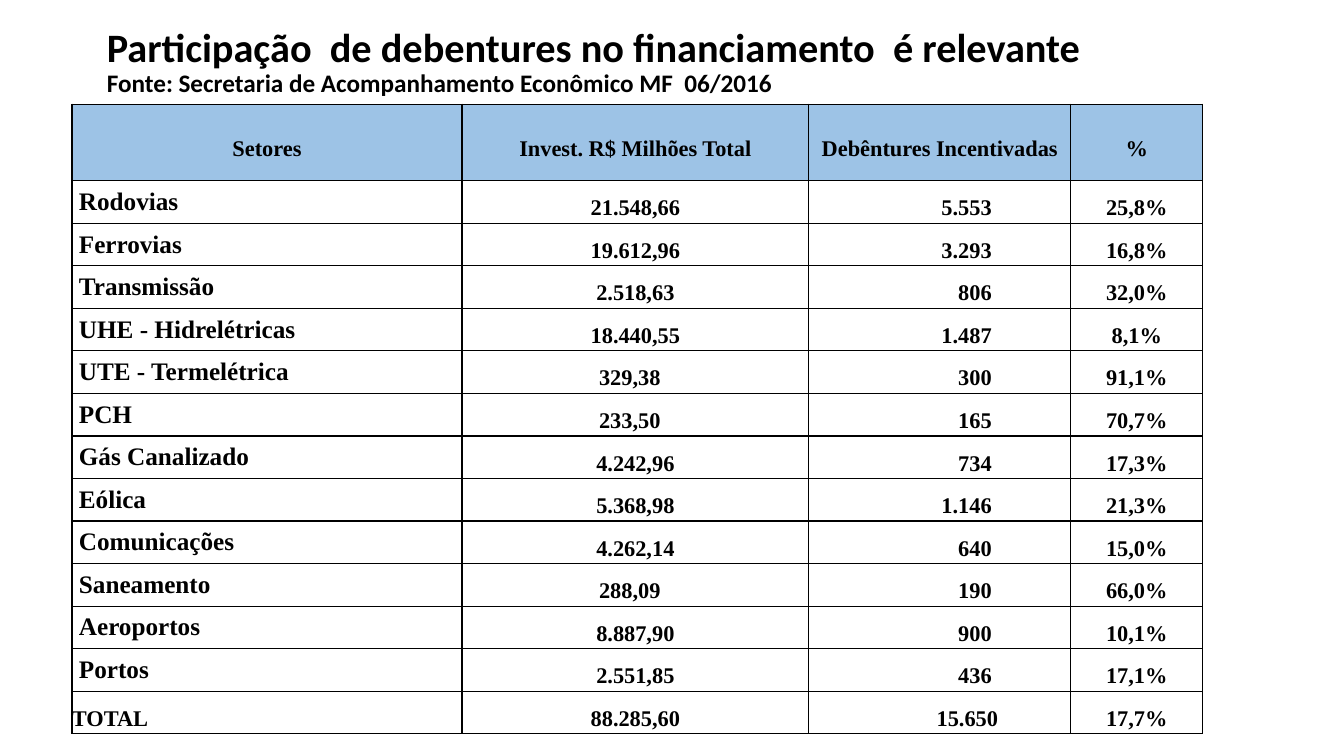
"""Build the slide on the share of debentures in infrastructure financing."""
from dataclasses import dataclass
from typing import Any

from lxml import etree
from pptx import Presentation
from pptx import util as u
from pptx.dml.color import RGBColor
from pptx.enum import text
from pptx.oxml import ns

BLACK = RGBColor(0x00, 0x00, 0x00)
HEADER_BLUE = RGBColor(0x9D, 0xC3, 0xE6)
TITLE_FONT = "Calibri"
TABLE_FONT = "Times New Roman"
COLUMN_WIDTHS = (278.6, 247.7, 187.2, 94.3)
HEADER_HEIGHT = 54.7
ROW_HEIGHT = 30.4

TITLE_LINES = (
    ("Participação  de debentures no financiamento  é relevante", 28.8),
    ("Fonte: Secretaria de Acompanhamento Econômico MF  06/2016", 18),
)
HEADERS = ("Setores", "Invest. R$ Milhões Total", "Debêntures Incentivadas", "%")
SECTORS = (
    ("Rodovias", "21.548,66", "5.553", "25,8%"),
    ("Ferrovias", "19.612,96", "3.293", "16,8%"),
    ("Transmissão", "2.518,63", "806", "32,0%"),
    ("UHE - Hidrelétricas", "18.440,55", "1.487", "8,1%"),
    ("UTE - Termelétrica", "329,38", "300", "91,1%"),
    ("PCH", "233,50", "165", "70,7%"),
    ("Gás Canalizado", "4.242,96", "734", "17,3%"),
    ("Eólica", "5.368,98", "1.146", "21,3%"),
    ("Comunicações", "4.262,14", "640", "15,0%"),
    ("Saneamento", "288,09", "190", "66,0%"),
    ("Aeroportos", "8.887,90", "900", "10,1%"),
    ("Portos", "2.551,85", "436", "17,1%"),
)
TOTAL = ("TOTAL", "88.285,60", "15.650", "17,7%")


@dataclass(frozen=True)
class CellStyle:
    """Text format of one kind of table cell."""

    alignment: Any = text.PP_ALIGN.CENTER
    size: float = 16
    line_spacing: float = 1.5
    space_before: float = 0.7
    margin_left: float = 0
    margin_right: float = 0
    fill: RGBColor | None = None


HEADER = CellStyle(space_before=0, fill=HEADER_BLUE)
SECTOR = CellStyle(text.PP_ALIGN.LEFT, 18, 1, 2, margin_left=5)
INVESTMENT = CellStyle(space_before=1.4)
SMALL_INVESTMENT = CellStyle(space_before=1.4, margin_right=8)
DEBENTURE = CellStyle(text.PP_ALIGN.RIGHT, margin_right=56.5)
PERCENT = CellStyle()
TOTAL_STYLES = (
    CellStyle(text.PP_ALIGN.LEFT, space_before=0),
    CellStyle(space_before=2),
    CellStyle(text.PP_ALIGN.RIGHT, margin_right=52),
    PERCENT,
)


def apply_format(target: Any, values: dict[str, Any]) -> None:
    """Set every attribute named in the format values."""
    for name, value in values.items():
        setattr(target, name, value)


def format_font(font: Any, name: str, size: float) -> None:
    """Make the font bold and black in the given face and size."""
    apply_format(font, {"name": name, "size": u.Pt(size), "bold": True})
    font.color.rgb = BLACK


def add_borders(cell: Any) -> None:
    """Draw a thin black line on each side of the cell."""
    properties = cell._tc.get_or_add_tcPr()
    for side in ("a:lnL", "a:lnR", "a:lnT", "a:lnB"):
        line = etree.SubElement(properties, ns.qn(side), w=str(int(u.Pt(1))))
        fill = etree.SubElement(line, ns.qn("a:solidFill"))
        etree.SubElement(fill, ns.qn("a:srgbClr"), val=str(BLACK))


def fill_cell(cell: Any, content: str, style: CellStyle) -> None:
    """Write the content into the cell and format it."""
    apply_format(cell, {
        "text": content,
        "vertical_anchor": text.MSO_ANCHOR.MIDDLE,
        "margin_left": u.Pt(style.margin_left),
        "margin_right": u.Pt(style.margin_right),
        "margin_top": u.Pt(0),
        "margin_bottom": u.Pt(0),
    })
    paragraph = cell.text_frame.paragraphs[0]
    apply_format(paragraph, {
        "alignment": style.alignment,
        "line_spacing": style.line_spacing,
        "space_before": u.Pt(style.space_before),
    })
    format_font(paragraph.runs[0].font, TABLE_FONT, style.size)
    add_borders(cell)
    if style.fill is None:
        cell.fill.background()
    else:
        cell.fill.solid()
        cell.fill.fore_color.rgb = style.fill


def add_title(slide: Any) -> None:
    """Place the title with its source line below."""
    shape = slide.shapes.title
    apply_format(shape, {
        "left": u.Pt(69.1), "top": u.Pt(28.1),
        "width": u.Pt(828), "height": u.Pt(53.3),
    })
    apply_format(shape.text_frame, {
        "word_wrap": True,
        "auto_size": text.MSO_AUTO_SIZE.NONE,
        "vertical_anchor": text.MSO_ANCHOR.MIDDLE,
        "margin_left": u.Pt(7.2), "margin_right": u.Pt(7.2),
        "margin_top": u.Pt(3.6), "margin_bottom": u.Pt(23.6),
    })
    paragraph = shape.text_frame.paragraphs[0]
    apply_format(paragraph, {
        "alignment": text.PP_ALIGN.LEFT, "line_spacing": 0.9, "space_before": u.Pt(0),
    })
    for index, (content, size) in enumerate(TITLE_LINES):
        if index:
            paragraph.add_line_break()
        run = paragraph.add_run()
        run.text = content
        format_font(run.font, TITLE_FONT, size)


def sector_styles(investment: str) -> tuple[CellStyle, ...]:
    """Choose the styles of a sector row from its investment value."""
    small = "." not in investment
    return SECTOR, SMALL_INVESTMENT if small else INVESTMENT, DEBENTURE, PERCENT


def add_sector_table(slide: Any) -> None:
    """Add the table of investments and debentures by sector."""
    rows = [(HEADERS, (HEADER,) * len(HEADERS))]
    rows += [(sector, sector_styles(sector[1])) for sector in SECTORS]
    rows.append((TOTAL, TOTAL_STYLES))
    heights = [HEADER_HEIGHT] + [ROW_HEIGHT] * (len(rows) - 1)
    table = slide.shapes.add_table(
        len(rows), len(HEADERS), u.Pt(51.4), u.Pt(74.4),
        u.Pt(sum(COLUMN_WIDTHS)), u.Pt(sum(heights)),
    ).table
    apply_format(table, {"first_row": False, "horz_banding": False})
    for column, width in zip(table.columns, COLUMN_WIDTHS):
        column.width = u.Pt(width)
    for row, height, (contents, styles) in zip(table.rows, heights, rows):
        row.height = u.Pt(height)
        for cell, content, style in zip(row.cells, contents, styles):
            fill_cell(cell, content, style)


def main() -> None:
    """Build and save the presentation."""
    presentation = Presentation()
    apply_format(presentation, {"slide_width": u.Pt(960), "slide_height": u.Pt(540)})
    slide = presentation.slides.add_slide(presentation.slide_layouts[5])
    add_title(slide)
    add_sector_table(slide)
    presentation.save("out.pptx")


if __name__ == "__main__":
    main()
